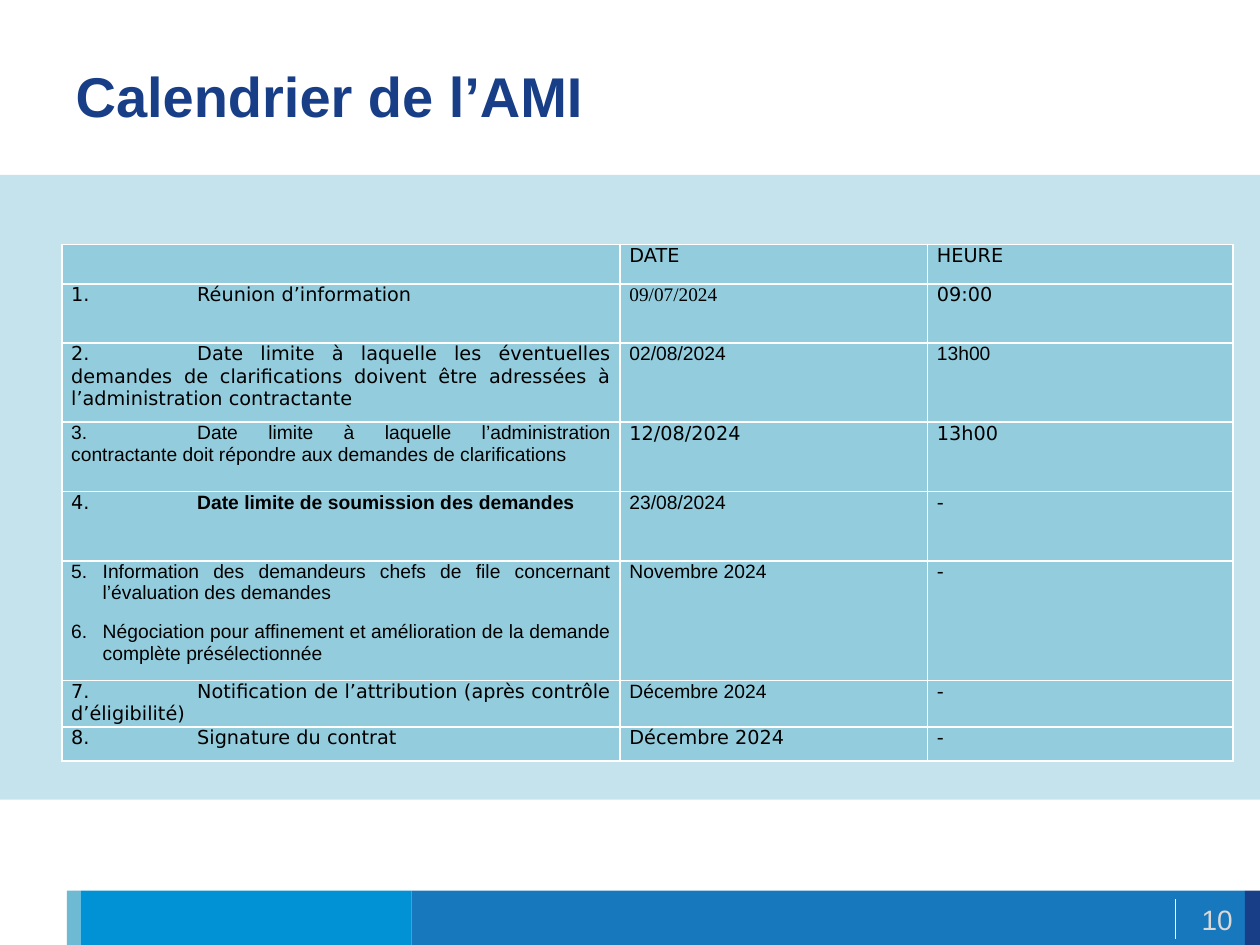
from lxml import etree
from pptx import Presentation
from pptx.dml.color import RGBColor
from pptx.enum.shapes import MSO_CONNECTOR, MSO_SHAPE
from pptx.enum.text import MSO_ANCHOR, MSO_AUTO_SIZE, PP_ALIGN
from pptx.oxml.ns import qn
from pptx.util import Pt

RECTANGLE = MSO_SHAPE.RECTANGLE
STRAIGHT = MSO_CONNECTOR.STRAIGHT
TOP, MIDDLE = MSO_ANCHOR.TOP, MSO_ANCHOR.MIDDLE
LEFT, RIGHT, JUSTIFY = PP_ALIGN.LEFT, PP_ALIGN.RIGHT, PP_ALIGN.JUSTIFY

SANS, DEJAVU, TIMES = "Arial", "DejaVu Sans", "Times New Roman"
NAVY, TEAL, WHITE, CELL_BLUE = "183E87", "6EBAD2", "FFFFFF", "93CDDD"

COLUMN_WIDTHS = [319, 175.7, 174.6]
ROW_HEIGHTS = [22.6, 33.6, 45.4, 39.7, 39.6, 68.4, 19.4, 19.4]


# Each cell is a list of paragraphs, each paragraph a list of (text, font, bold)
def plain(text, font=DEJAVU):
    return [[(text, font, False)]]


CALENDAR = [
    [None, plain("DATE"), plain("HEURE")],
    [plain("1.\tRéunion d’information "), plain("09/07/2024", TIMES), plain("09:00 ")],
    [plain("2.\tDate limite à laquelle les éventuelles demandes de clarifications "
           "doivent être adressées à l’administration contractante"),
     plain("02/08/2024", SANS), plain("13h00", SANS)],
    [plain("3.\tDate limite à laquelle l’administration contractante doit répondre "
           "aux demandes de clarifications", SANS),
     plain("12/08/2024"), plain("13h00")],
    [[[("4.\t", DEJAVU, False), ("Date limite de soumission des demandes", SANS, True)]],
     plain("23/08/2024", SANS), plain("-")],
    [plain("Information des demandeurs chefs de file concernant l’évaluation "
           "des demandes", SANS)
     + plain("Négociation pour affinement et amélioration de la demande complète "
             "présélectionnée", SANS),
     plain("Novembre 2024", SANS), plain("-")],
    [plain("7.\tNotification de l’attribution (après contrôle d’éligibilité)"),
     plain("Décembre 2024", SANS), plain("-")],
    [plain("8.\tSignature du contrat"), plain("Décembre 2024"), plain("-")],
]


def color(value):
    return RGBColor.from_string(value)


def style_font(font, name, size, value, bold=False):
    font.name, font.size, font.bold = name, Pt(size), bold
    font.color.rgb = color(value)


def add_bar(slide, left, top, width, height, fill, opacity=None):
    shape = slide.shapes.add_shape(RECTANGLE, Pt(left), Pt(top), Pt(width), Pt(height))
    shape.shadow.inherit = False
    shape.fill.solid()
    shape.fill.fore_color.rgb = color(fill)
    shape.line.fill.background()
    if opacity:
        fill_color = shape.fill._xPr.find(qn("a:solidFill"))[0]
        etree.SubElement(fill_color, qn("a:alpha"), val=str(opacity * 1000))


def add_divider(slide, x, top, bottom):
    line = slide.shapes.add_connector(STRAIGHT, Pt(x), Pt(top), Pt(x), Pt(bottom))
    line.line.color.rgb = color(WHITE)
    line.line.width = Pt(0.75)
    etree.SubElement(line._element.spPr, qn("a:effectLst"))


def set_title(slide, text):
    title = slide.shapes.title
    title.left, title.top, title.width, title.height = Pt(36), Pt(31.7), Pt(648), Pt(33)
    frame = title.text_frame
    frame.text = text
    frame.auto_size = MSO_AUTO_SIZE.NONE
    frame.vertical_anchor = TOP
    frame.margin_top = Pt(3.6)
    frame.paragraphs[0].alignment = LEFT
    style_font(frame.paragraphs[0].runs[0].font, SANS, 32, NAVY, True)


def add_page_number(slide, text):
    box = slide.shapes.add_textbox(Pt(671.8), Pt(508.3), Pt(39.6), Pt(33.8))
    frame = box.text_frame
    frame.word_wrap = True
    frame.text = text
    frame.vertical_anchor = MIDDLE
    frame.paragraphs[0].alignment = RIGHT
    style_font(frame.paragraphs[0].runs[0].font, SANS, 16, "D9D9D9")


def set_borders(cell):
    properties = cell._tc.get_or_add_tcPr()
    for side in ("lnL", "lnR", "lnT", "lnB"):
        line = etree.SubElement(properties, qn("a:" + side), w=str(Pt(1)))
        fill = etree.SubElement(line, qn("a:solidFill"))
        etree.SubElement(fill, qn("a:srgbClr"), val=WHITE)


def number_paragraph(paragraph, start):
    properties = paragraph._p.get_or_add_pPr()
    properties.set("marL", str(Pt(18)))
    properties.set("indent", str(-Pt(18)))
    etree.SubElement(properties, qn("a:buFont"), typeface=SANS)
    etree.SubElement(properties, qn("a:buAutoNum"), type="arabicPeriod", startAt=str(start))


def add_tab_stop(paragraph, position):
    tabs = etree.SubElement(paragraph._p.get_or_add_pPr(), qn("a:tabLst"))
    etree.SubElement(tabs, qn("a:tab"), pos=str(Pt(position)), algn="l")


def fill_cell(cell, paragraphs):
    set_borders(cell)
    cell.fill.solid()
    cell.fill.fore_color.rgb = color(CELL_BLUE)
    cell.margin_left = cell.margin_right = Pt(5.3)
    cell.margin_top = cell.margin_bottom = 0
    frame = cell.text_frame
    for index, runs in enumerate(paragraphs or []):
        paragraph = frame.add_paragraph() if index else frame.paragraphs[0]
        if len(paragraphs) > 1:
            number_paragraph(paragraph, 5)
        elif "\t" in runs[0][0]:
            add_tab_stop(paragraph, 72)
        paragraph.alignment = JUSTIFY
        paragraph.space_after = Pt(10)
        for text, font, bold in runs:
            run = paragraph.add_run()
            run.text = text
            style_font(run.font, font, 11, "000000", bold)


def add_calendar(slide):
    frame = slide.shapes.add_table(len(CALENDAR), len(COLUMN_WIDTHS), Pt(35.4), Pt(139.7),
                                   Pt(sum(COLUMN_WIDTHS)), Pt(sum(ROW_HEIGHTS)))
    table = frame.table
    table.first_row = table.horz_banding = False
    for column, width in zip(table.columns, COLUMN_WIDTHS):
        column.width = Pt(width)
    for row, height, contents in zip(table.rows, ROW_HEIGHTS, CALENDAR):
        row.height = Pt(height)
        for cell, paragraphs in zip(row.cells, contents):
            fill_cell(cell, paragraphs)


def main():
    presentation = Presentation()
    presentation.slide_width, presentation.slide_height = Pt(720), Pt(540)
    slide = presentation.slides.add_slide(presentation.slide_layouts[5])

    # Footer bars, side by side
    edges = [38.2, 46.1, 235.3, 711.4, 720]
    for left, right, fill in zip(edges, edges[1:], [TEAL, "0092D4", "1878BD", NAVY]):
        add_bar(slide, left, 509, right - left, 31, fill)
    add_divider(slide, 671.8, 514, 536.4)

    # Background band
    add_bar(slide, 0, 100, 720, 357, TEAL, opacity=40)

    # Content
    set_title(slide, "Calendrier de l’AMI")
    add_page_number(slide, "10")
    add_calendar(slide)
    presentation.save("out.pptx")


if __name__ == "__main__":
    main()
